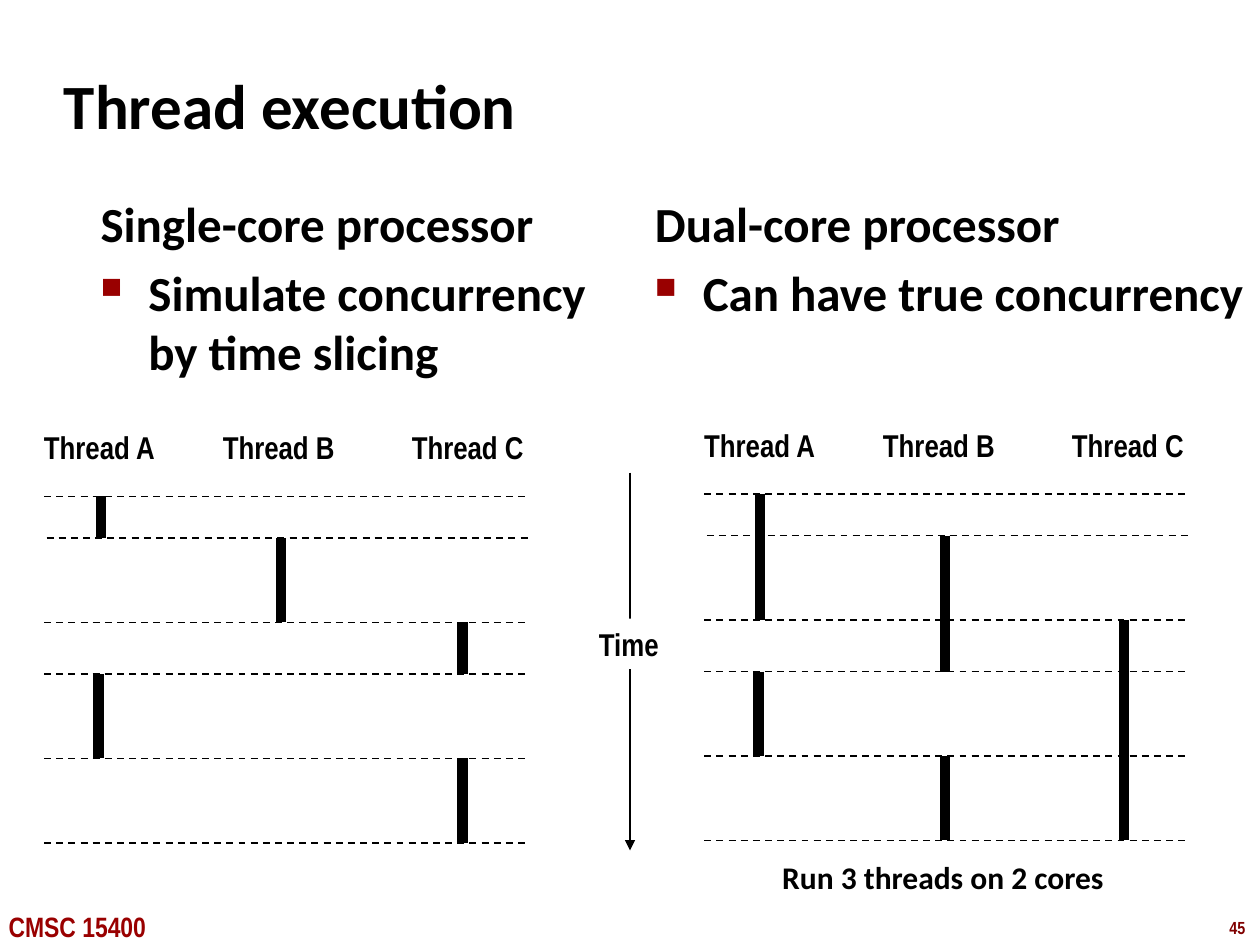
from dataclasses import dataclass

from lxml import etree
from pptx import Presentation
from pptx import util as u
from pptx.dml.color import RGBColor
from pptx.enum import dml, shapes, text
from pptx.oxml.ns import qn


@dataclass(frozen=True)
class Theme:
    heading: str = "Calibri"
    label: str = "Arial Narrow"
    ink: str = "000000"
    paper: str = "FFFFFF"
    accent: str = "990000"
    number: str = "800000"
    title_pt: float = 36
    body_pt: float = 28
    label_pt: float = 18
    footer_pt: float = 16
    number_pt: float = 10
    thin_pt: float = 1
    bar_pt: float = 6


@dataclass(frozen=True)
class Box:
    left: float
    top: float
    width: float
    height: float

    def lengths(self) -> list:
        return [u.Inches(v) for v in (self.left, self.top, self.width, self.height)]


@dataclass(frozen=True)
class Column:
    box: Box
    heading: str
    bullet: str


@dataclass(frozen=True)
class Bar:
    x: float
    start: int
    end: int


@dataclass(frozen=True)
class Timeline:
    left: float
    top: float
    bars: tuple


T = Theme()
LEVELS = (0, 0.33, 1, 1.41, 2.08, 2.75)
LEVEL_WIDTH = 3.82
SHIFTED_LEVEL, SHIFT = 1, 0.02
LABELS = (("Thread A", -0.1, 1.09), ("Thread B", 1.32, 1.1), ("Thread C", 2.82, 1.1))
LABEL_RISE, LABEL_HEIGHT = 0.59, 0.4

COLUMNS = (
    Column(Box(0.7, 1.49, 4.23, 5.44), "Single-core processor",
           "Simulate concurrency by time slicing"),
    Column(Box(5.1, 1.49, 4.9, 5.44), "Dual-core processor",
           "Can have true concurrency"),
)
TIMELINES = (
    Timeline(0.35, 3.94, (Bar(0.8, 0, 1), Bar(2.23, 1, 2), Bar(3.67, 2, 3),
                          Bar(0.78, 3, 4), Bar(3.67, 4, 5))),
    Timeline(5.59, 3.92, (Bar(6.03, 0, 2), Bar(7.5, 1, 3), Bar(8.92, 2, 5),
                          Bar(6.02, 3, 4), Bar(7.5, 4, 5))),
)


def add_run(p, words: str, size: float, font: str, color: str = T.ink) -> None:
    r = p.add_run()
    r.text = words
    r.font.name = font
    r.font.size = u.Pt(size)
    r.font.bold = True
    r.font.color.rgb = RGBColor.from_string(color)


def add_label(s, box: Box, words: str, size: float = T.label_pt,
              font: str = T.label, color: str = T.ink):
    sp = s.shapes.add_textbox(*box.lengths())
    tf = sp.text_frame
    tf.word_wrap = False
    tf.auto_size = text.MSO_AUTO_SIZE.SHAPE_TO_FIT_TEXT
    add_run(tf.paragraphs[0], words, size, font, color)
    return sp


def add_title(s, box: Box, words: str) -> None:
    sp = s.shapes.add_textbox(*box.lengths())
    tf = sp.text_frame
    tf.word_wrap = True
    tf.vertical_anchor = text.MSO_ANCHOR.MIDDLE
    add_run(tf.paragraphs[0], words, T.title_pt, T.heading)


def set_bullet(p) -> None:
    pPr = p._p.get_or_add_pPr()
    pPr.set("marL", str(u.Inches(0.38)))
    pPr.set("indent", str(-u.Inches(0.38)))
    color = etree.SubElement(pPr, qn("a:buClr"))
    etree.SubElement(color, qn("a:srgbClr"), val=T.accent)
    etree.SubElement(pPr, qn("a:buSzPct"), val="60000")
    etree.SubElement(pPr, qn("a:buChar"), char="■")


def add_column(s, column: Column) -> None:
    sp = s.shapes.add_textbox(*column.box.lengths())
    tf = sp.text_frame
    tf.word_wrap = True
    add_run(tf.paragraphs[0], column.heading, T.body_pt, T.heading)
    p = tf.add_paragraph()
    set_bullet(p)
    p.space_before = u.Pt(T.body_pt * 0.2)
    add_run(p, column.bullet, T.body_pt, T.heading)


def add_line(s, x1: float, y1: float, x2: float, y2: float, width: float = T.thin_pt,
             dashed: bool = False, arrow: bool = False) -> None:
    ends = [u.Inches(v) for v in (x1, y1, x2, y2)]
    cx = s.shapes.add_connector(shapes.MSO_CONNECTOR.STRAIGHT, *ends)
    cx.line.color.rgb = RGBColor.from_string(T.ink)
    cx.line.width = u.Pt(width)
    if dashed:
        cx.line.dash_style = dml.MSO_LINE.DASH
    if arrow:
        etree.SubElement(cx.line._get_or_add_ln(), qn("a:tailEnd"), type="triangle")
    etree.SubElement(cx._element.spPr, qn("a:effectLst"))


def add_timeline(s, timeline: Timeline) -> None:
    for words, offset, width in LABELS:
        add_label(s, Box(timeline.left + offset, timeline.top - LABEL_RISE,
                         width, LABEL_HEIGHT), words)
    ys = [timeline.top + level for level in LEVELS]
    for bar in timeline.bars:
        add_line(s, bar.x, ys[bar.start], bar.x, ys[bar.end], T.bar_pt)
    for i, y in enumerate(ys):
        x = timeline.left + (SHIFT if i == SHIFTED_LEVEL else 0)
        add_line(s, x, y, x + LEVEL_WIDTH, y, dashed=True)


def add_time_axis(s) -> None:
    add_line(s, 5, 3.75, 5, 6.75, arrow=True)
    sp = add_label(s, Box(4.65, 4.91, 0.68, LABEL_HEIGHT), "Time")
    sp.fill.solid()
    sp.fill.fore_color.rgb = RGBColor.from_string(T.paper)
    sp.text_frame.paragraphs[0].alignment = text.PP_ALIGN.CENTER


def main() -> None:
    prs = Presentation()
    prs.slide_width, prs.slide_height = u.Inches(10), u.Inches(7.5)
    s = prs.slides.add_slide(prs.slide_layouts[6])
    add_label(s, Box(9.66, 7.23, 0.34, 0.27), "45", T.number_pt, color=T.number)
    add_label(s, Box(-0.03, 7.17, 1.42, 0.37), "CMSC 15400", T.footer_pt, color=T.accent)
    add_title(s, Box(0.41, 0.41, 8.3, 0.83), "Thread execution")
    for column in COLUMNS:
        add_column(s, column)
    add_time_axis(s)
    for timeline in TIMELINES:
        add_timeline(s, timeline)
    add_label(s, Box(6.11, 6.76, 2.78, LABEL_HEIGHT), "Run 3 threads on 2 cores",
              font=T.heading)
    prs.save("out.pptx")


if __name__ == "__main__":
    main()
